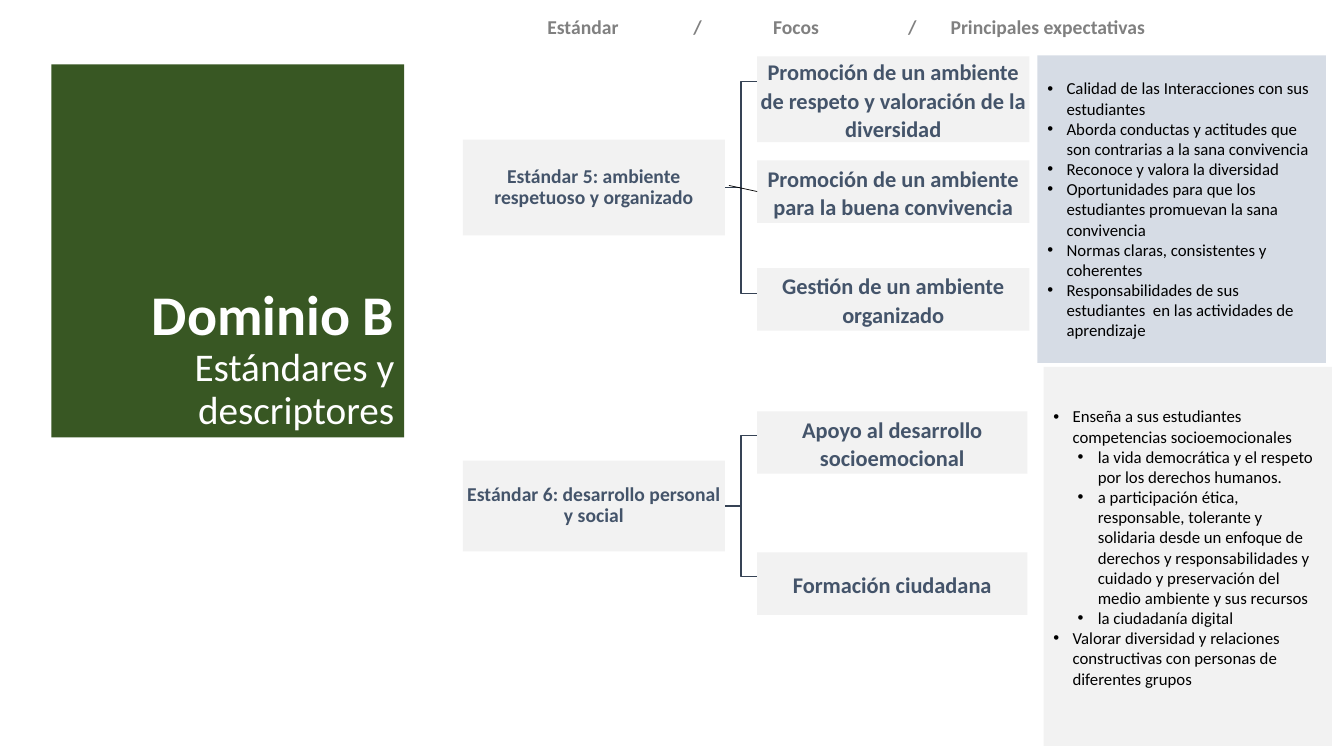
from lxml import etree
from pptx import Presentation
from pptx.dml.color import RGBColor
from pptx.enum.shapes import MSO_CONNECTOR as Connector, MSO_SHAPE as Shape
from pptx.enum.text import MSO_ANCHOR as Anchor, PP_ALIGN as Align
from pptx.oxml.ns import qn
from pptx.util import Inches, Pt

COLORS = {
    "green": "385723", "navy": "364355", "slate": "44546A", "gray": "808080",
    "light": "F2F2F2", "blue": "D6DCE5", "black": "000000", "white": "FFFFFF",
}
FONT = "Calibri"
CELL = Inches(0.1)  # one column or row of the grid
COLUMNS, ROWS = 133.3, 75


def grid(*cells):
    return [round(cell * CELL) for cell in cells]


class DomainSlide:
    """Holds the slide and the style shared by its elements; lengths are grid cells."""

    def __init__(self, presentation):
        self.shapes = presentation.slides.add_slide(presentation.slide_layouts[6]).shapes

    def style(self, font, size, color, bold=False):
        font.name, font.size, font.bold = FONT, Pt(size), bold
        font.color.rgb = RGBColor.from_string(COLORS[color])

    def rectangle(self, area, fill, anchor=Anchor.MIDDLE):
        box = self.shapes.add_shape(Shape.RECTANGLE, *grid(*area))
        box.shadow.inherit = False
        box.fill.solid()
        box.fill.fore_color.rgb = RGBColor.from_string(COLORS[fill])
        box.line.fill.background()
        box.text_frame.word_wrap = True
        box.text_frame.vertical_anchor = anchor
        return box

    def title(self, area, heading, subheading):
        box = self.rectangle(area, "green", Anchor.BOTTOM)
        paragraph = box.text_frame.paragraphs[0]
        paragraph.alignment, paragraph.line_spacing = Align.RIGHT, 0.9
        heading_run = paragraph.add_run()
        heading_run.text = heading
        self.style(heading_run.font, 40, "white", True)
        paragraph.add_line_break()
        subheading_run = paragraph.add_run()
        subheading_run.text = subheading
        self.style(subheading_run.font, 28, "white")

    def node(self, area, text, size, line_spacing, space_after):
        box = self.rectangle(area, "light")
        frame = box.text_frame
        frame.margin_left = frame.margin_right = Inches(0.01)
        frame.margin_top = frame.margin_bottom = Inches(0.01)
        paragraph = frame.paragraphs[0]
        paragraph.text = text
        paragraph.alignment = Align.CENTER
        paragraph.line_spacing, paragraph.space_after = line_spacing, Pt(space_after)
        self.style(paragraph.font, size, "slate", True)
        return box

    def branch(self, left, right, hub, reach):
        """Draw two elbows from the hub row, one up and one down by reach."""
        middle = (left + right) / 2
        for end in (hub + reach, hub - reach):
            start, *bends = [grid(*point) for point in (
                (left, hub), (middle, hub), (middle, end), (right, end))]
            builder = self.shapes.build_freeform(*start, scale=1.0)
            builder.add_line_segments(bends, close=False)
            elbow = builder.convert_to_shape()
            elbow.shadow.inherit = False
            elbow.fill.background()
            elbow.line.color.rgb = RGBColor.from_string(COLORS["navy"])
            elbow.line.width = Pt(1)

    def link(self, start, end, target):
        """Draw a thin line that joins the left side of the target."""
        line = self.shapes.add_connector(Connector.STRAIGHT, *grid(*start, *end))
        line.end_connect(target, 1)
        line.line.color.rgb = RGBColor.from_string(COLORS["black"])
        line.line.width = Pt(0.5)
        etree.SubElement(line._element.spPr, qn("a:effectLst"))

    def expectations(self, area, fill, items, bottom_margin=0.05):
        """List (level, text) items as bullets."""
        frame = self.rectangle(area, fill).text_frame
        frame.margin_bottom = Inches(bottom_margin)
        for index, (level, text) in enumerate(items):
            paragraph = frame.add_paragraph() if index else frame.paragraphs[0]
            paragraph.text, paragraph.level = text, level
            paragraph.alignment = Align.LEFT
            self.style(paragraph.font, 12, "black")
            properties = paragraph._p.get_or_add_pPr()
            properties.set("marL", str(Inches(0.44 if level else 0.19)))
            properties.set("indent", str(Inches(-0.2 if level else -0.19)))
            bullet_font = etree.Element(qn("a:buFont"), typeface="Arial")
            bullet = etree.Element(qn("a:buChar"), char="•")
            properties.find(qn("a:defRPr")).addprevious(bullet_font)
            bullet_font.addnext(bullet)

    def header(self, area, labels, stops):
        """Write the labels on one line, each after the first at its tab stop."""
        frame = self.shapes.add_textbox(*grid(*area)).text_frame
        frame.word_wrap = True
        paragraph = frame.paragraphs[0]
        paragraph.text = "\t".join(labels)
        self.style(paragraph.font, 14, "gray", True)
        tabs = etree.Element(qn("a:tabLst"))
        for stop in grid(*stops):
            etree.SubElement(tabs, qn("a:tab"), pos=str(stop), algn="l")
        paragraph._p.pPr.find(qn("a:defRPr")).addprevious(tabs)


STANDARD_LEFT, STANDARD_WIDTH = 45.9, 26
STANDARD_RIGHT = STANDARD_LEFT + STANDARD_WIDTH
FOCUS_LEFT, FOCUS_HEIGHT = 75.1, 6.2
PANEL_WIDTH = 28.6

# Each standard: text, hub row, height, branch reach, focus width, focuses (top, height, text)
STANDARDS = [
    ("Estándar 5: ambiente respetuoso y organizado", 18.6, 9.5, 10.5, 27.0, [
        (5.6, 8.5, "Promoción de un ambiente de respeto y valoración de la diversidad"),
        (15.9, FOCUS_HEIGHT, "Promoción de un ambiente para la buena convivencia"),
        (26.6, FOCUS_HEIGHT, "Gestión de un ambiente organizado"),
    ]),
    ("Estándar 6: desarrollo personal y social", 50.2, 9.0, 7.0, 26.8, [
        (40.8, FOCUS_HEIGHT, "Apoyo al desarrollo socioemocional"),
        (54.8, FOCUS_HEIGHT, "Formación ciudadana"),
    ]),
]
CLASSROOM = [
    (0, "Calidad de las Interacciones con sus estudiantes"),
    (0, "Aborda conductas y actitudes que son contrarias a la sana convivencia"),
    (0, "Reconoce y valora la diversidad"),
    (0, "Oportunidades para que los estudiantes promuevan la sana convivencia"),
    (0, "Normas claras, consistentes y coherentes"),
    (0, "Responsabilidades de sus estudiantes  en las actividades de aprendizaje"),
]
CITIZENSHIP = [
    (0, "Enseña a sus estudiantes competencias socioemocionales"),
    (1, "la vida democrática y el respeto por los derechos humanos."),
    (1, "a participación ética, responsable, tolerante y solidaria desde un enfoque de "
        "derechos y responsabilidades y  cuidado y preservación del medio ambiente y "
        "sus recursos"),
    (1, "la ciudadanía digital"),
    (0, "Valorar diversidad y relaciones constructivas con personas de diferentes grupos"),
]


def main():
    presentation = Presentation()
    presentation.slide_width, presentation.slide_height = grid(COLUMNS, ROWS)
    slide = DomainSlide(presentation)

    slide.title((5.1, 6.4, 35, 37), "Dominio B", "Estándares y descriptores")
    focus_boxes = []
    for standard, hub, height, reach, focus_width, focuses in STANDARDS:
        slide.branch(STANDARD_RIGHT, FOCUS_LEFT, hub, reach)
        slide.node((STANDARD_LEFT, hub - height / 2, STANDARD_WIDTH, height),
                   standard, 14, 0.9, 5)
        for top, focus_height, focus in focuses:
            focus_boxes.append(slide.node(
                (FOCUS_LEFT, top, focus_width, focus_height), focus, 16, 1.07, 8))

    slide.expectations((102.9, 5.5, PANEL_WIDTH, 30.5), "blue", CLASSROOM)
    slide.expectations((103.5, 36.4, PANEL_WIDTH, 37.6), "light", CITIZENSHIP, 0.23)
    slide.header((53.3, 1, 80, 3.4),
                 ["Estándar", "/", "Focos", "/", "Principales expectativas"],
                 [14.5, 22.4, 35.8, 40])
    slide.link((72.3, 18.4), (FOCUS_LEFT, 18.7), focus_boxes[1])
    presentation.save("out.pptx")


if __name__ == "__main__":
    main()
